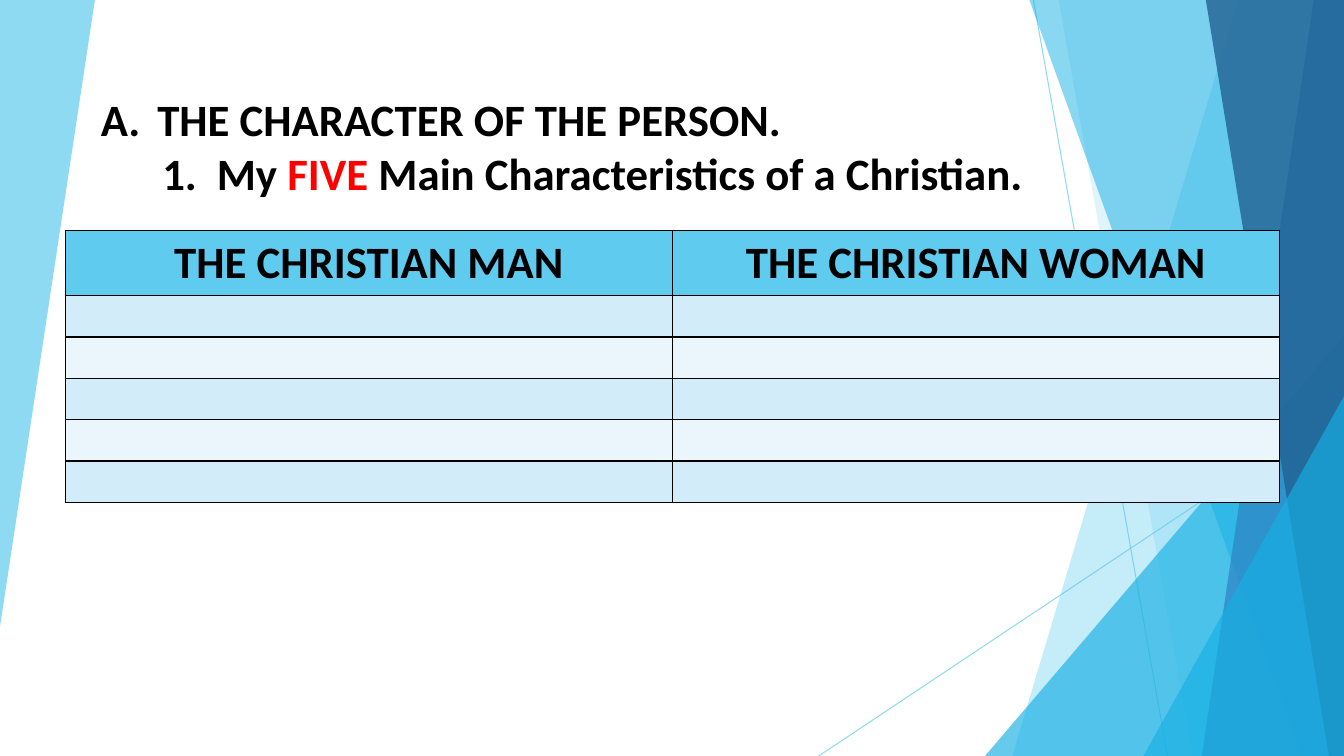
import pptx
import pptx.util
import pptx.oxml.ns
import pptx.dml.color
import pptx.enum.shapes
import pptx.enum.text
import lxml.etree

Inches = pptx.util.Inches
Pt = pptx.util.Pt
qn = pptx.oxml.ns.qn


def paint(fill, colour, opacity=100):
    fill.solid()
    fill.fore_color.rgb = pptx.dml.color.RGBColor.from_string(colour)
    if opacity < 100:
        srgb = fill._xPr.find(".//" + qn("a:srgbClr"))
        lxml.etree.SubElement(srgb, qn("a:alpha"), val=str(opacity * 1000))


def write(paragraph, text, colour="000000"):
    run = paragraph.add_run()
    run.text = text
    for name, value in {"name": "Calibri", "size": Pt(32), "bold": True}.items():
        setattr(run.font, name, value)
    paint(run.font.fill, colour)


deck = pptx.Presentation()
deck.slide_width, deck.slide_height = Inches(13.33), Inches(7.5)
slide = deck.slides.add_slide(deck.slide_layouts[1])
shapes = slide.shapes
heading, point = slide.placeholders

rays = [((10.25, 0), (11.58, 7.5)), ((13.33, 4.03), (8.12, 7.5))]
bands = [
    ("5FCBEF", 70, [(0, 0), (0.94, 0), (0.94, 0.01), (0, 6.22)]),
    ("5FCBEF", 36, [(12.28, 0), (13.33, 0), (13.33, 7.5), (10.04, 7.5)]),
    ("5FCBEF", 20, [(10.5, 0), (13.33, 0), (13.33, 7.5), (11.83, 7.5)]),
    ("17B0E4", 66, [(9.77, 3.33), (13.33, 7.5)]),
    ("17B0E4", 50, [(10.21, 0), (13.33, 0), (13.33, 7.5), (12.91, 7.5)]),
    ("2E83C3", 70, [(13.03, 0), (13.33, 0), (13.33, 7.5), (11.92, 7.5)]),
    ("226292", 80, [(11.96, 0), (13.33, 0), (13.33, 7.5), (13.18, 7.5)]),
    ("17B0E4", 66, [(11.34, 3.93), (13.33, 7.5)]),
]

for start, end in rays:
    ray = shapes.add_connector(
        pptx.enum.shapes.MSO_CONNECTOR.STRAIGHT, *map(Inches, start + end))
    ray.line.width = Pt(0.75)
    paint(ray.line.fill, "5FCBEF", 70)
    lxml.etree.SubElement(ray._element.spPr, qn("a:effectLst"))

for colour, opacity, corners in bands:
    corners = [(Inches(x), Inches(y)) for x, y in corners]
    if len(corners) == 2:
        (left, top), (right, bottom) = corners
        band = shapes.add_shape(
            pptx.enum.shapes.MSO_SHAPE.ISOSCELES_TRIANGLE,
            left, top, right - left, bottom - top)
        band.adjustments[0] = 1
    else:
        outline = shapes.build_freeform(*corners[0])
        outline.add_line_segments(corners[1:], close=True)
        band = outline.convert_to_shape()
    band.shadow.inherit = False
    band.line.fill.background()
    paint(band.fill, colour, opacity)

outline_levels = [
    (heading, 0.86, "alphaUcPeriod", 0.56, 0.56,
     [("THE CHARACTER OF THE PERSON.", "000000")]),
    (point, 1.4, "arabicPeriod", 1.15, 0.54,
     [("My ", "000000"), ("FIVE", "FF0000"),
      (" Main Characteristics of a Christian.", "000000")]),
]
frame_format = {
    "word_wrap": True,
    "auto_size": pptx.enum.text.MSO_AUTO_SIZE.NONE,
    "vertical_anchor": pptx.enum.text.MSO_ANCHOR.TOP,
}
paragraph_format = {
    "alignment": pptx.enum.text.PP_ALIGN.LEFT,
    "space_before": Pt(0),
}
for level, top, numbering, margin, hanging, pieces in outline_levels:
    place = {"left": 0.9, "top": top, "width": 11.27, "height": 0.64}
    for name, value in place.items():
        setattr(level, name, Inches(value))
    for name, value in frame_format.items():
        setattr(level.text_frame, name, value)
    line = level.text_frame.paragraphs[0]
    for name, value in paragraph_format.items():
        setattr(line, name, value)
    properties = line._p.get_or_add_pPr()
    properties.set("marL", str(Inches(margin)))
    properties.set("indent", str(-Inches(hanging)))
    lxml.etree.SubElement(properties, qn("a:buFont"), typeface="+mj-lt")
    lxml.etree.SubElement(properties, qn("a:buAutoNum"), type=numbering)
    for text, colour in pieces:
        write(line, text, colour)
    shapes._spTree.append(level._element)

people = ["THE CHRISTIAN MAN", "THE CHRISTIAN WOMAN"]
row_fills = ["5FCBEF"] + ["D2ECF9", "EAF6FC"] * 2 + ["D2ECF9"]
traits = shapes.add_table(
    len(row_fills), len(people),
    Inches(0.65), Inches(2.29), Inches(12.04), Inches(2.67)).table
for row, colour in zip(traits.rows, row_fills):
    row.height = Inches(0.41)
    for cell in row.cells:
        for side in ("a:lnL", "a:lnR", "a:lnT", "a:lnB"):
            border = lxml.etree.SubElement(
                cell._tc.get_or_add_tcPr(), qn(side), w=str(Pt(1)))
            border_fill = lxml.etree.SubElement(border, qn("a:solidFill"))
            lxml.etree.SubElement(border_fill, qn("a:srgbClr"), val="000000")
        paint(cell.fill, colour)
traits.rows[0].height = Inches(0.63)
for cell, person in zip(traits.rows[0].cells, people):
    title_line = cell.text_frame.paragraphs[0]
    title_line.alignment = pptx.enum.text.PP_ALIGN.CENTER
    write(title_line, person)

deck.save("out.pptx")
